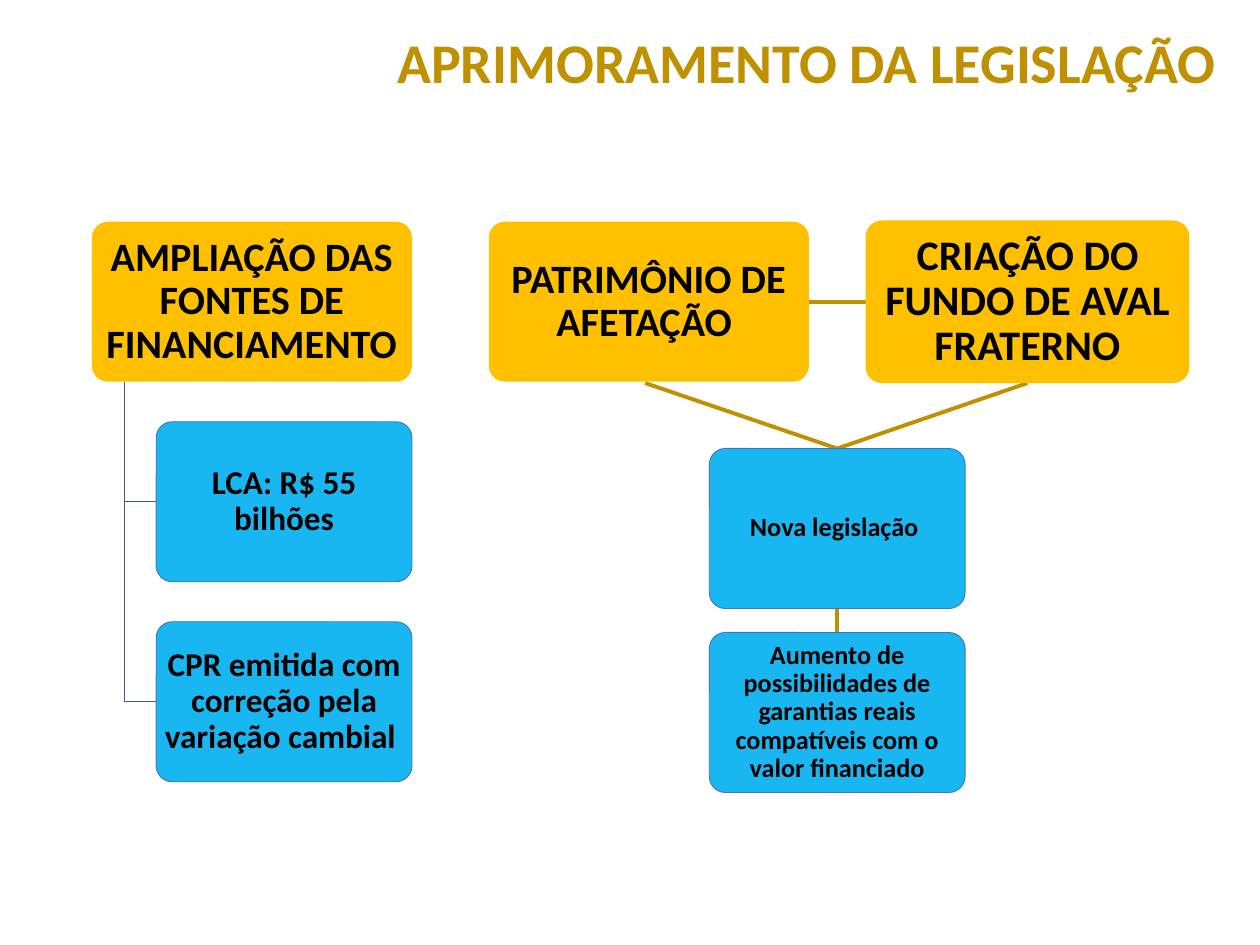
from dataclasses import dataclass

from lxml.etree import SubElement
from pptx import Presentation
from pptx.dml.color import RGBColor
from pptx.enum.shapes import MSO_CONNECTOR, MSO_SHAPE
from pptx.enum.text import MSO_ANCHOR, PP_ALIGN
from pptx.oxml.ns import qn
from pptx.util import Inches, Pt


@dataclass(frozen=True)
class Theme:
    font: str = "Calibri"
    gold: RGBColor = RGBColor(0xBF, 0x90, 0x00)
    amber: RGBColor = RGBColor(0xFF, 0xC0, 0x00)
    blue: RGBColor = RGBColor(0x00, 0xB0, 0xF0)
    outline: RGBColor = RGBColor(0x44, 0x72, 0xC4)
    branch: RGBColor = RGBColor(0x36, 0x5B, 0x9D)
    black: RGBColor = RGBColor(0, 0, 0)
    blue_opacity: int = 90
    title_size: float = 32
    topic_size: float = 23
    fund_size: float = 24
    detail_size: float = 19
    law_size: float = 15
    thin: float = 0.5
    thick: float = 2.25


@dataclass(frozen=True)
class Box:
    text: str
    left: float
    top: float
    width: float
    height: float
    size: float
    is_topic: bool = False

    @property
    def center(self) -> float:
        return self.left + self.width / 2

    @property
    def middle(self) -> float:
        return self.top + self.height / 2

    @property
    def bottom(self) -> float:
        return self.top + self.height


T = Theme()
TOPIC_W, DETAIL_W, BOX_H = 2.54, 2.03, 1.27
TOPIC_TOP, SOURCES_LEFT, DETAIL_LEFT, LAW_LEFT = 1.76, 0.73, 1.24, 5.63
ROW_STEP = BOX_H * 1.25
TRUNK_X = 0.99
ESTATE_LINK_X = 5.12

SOURCES = Box("AMPLIAÇÃO DAS FONTES DE FINANCIAMENTO",
              SOURCES_LEFT, TOPIC_TOP, TOPIC_W, BOX_H, T.topic_size, True)
DETAILS = [
    Box(text, DETAIL_LEFT, TOPIC_TOP + row * ROW_STEP, DETAIL_W, BOX_H, T.detail_size)
    for row, text in enumerate(
        ["LCA: R$ 55 bilhões", "CPR emitida com correção pela variação cambial "], 1)
]
ESTATE = Box("PATRIMÔNIO DE AFETAÇÃO ", 3.88, TOPIC_TOP, TOPIC_W, BOX_H, T.topic_size, True)
FUND = Box("CRIAÇÃO DO FUNDO DE AVAL FRATERNO", 6.87, 1.75, 2.57, 1.29, T.fund_size, True)
LAW = Box("Nova legislação ", LAW_LEFT, 3.56, DETAIL_W, BOX_H, T.law_size)
OUTCOME = Box("Aumento de possibilidades de garantias reais compatíveis com o valor financiado",
              LAW_LEFT, 5.02, DETAIL_W, BOX_H, T.law_size)


def write_text(sp, text: str, size: float, color: RGBColor, align: PP_ALIGN,
               margins: tuple[float, float]) -> None:
    tf = sp.text_frame
    mx, my = (Inches(m) for m in margins)
    frame_format = dict(word_wrap=True, vertical_anchor=MSO_ANCHOR.MIDDLE, margin_left=mx,
                        margin_right=mx, margin_top=my, margin_bottom=my)
    for name, value in frame_format.items():
        setattr(tf, name, value)
    p = tf.paragraphs[0]
    p.alignment, p.line_spacing = align, 0.9
    r = p.add_run()
    r.text = text
    for name, value in dict(name=T.font, size=Pt(size), bold=True).items():
        setattr(r.font, name, value)
    r.font.color.rgb = color


def add_box(s, box: Box) -> None:
    sp = s.shapes.add_shape(MSO_SHAPE.ROUNDED_RECTANGLE, Inches(box.left), Inches(box.top),
                            Inches(box.width), Inches(box.height))
    sp.adjustments[0] = 0.1
    sp.shadow.inherit = False
    sp.fill.solid()
    if box.is_topic:
        sp.fill.fore_color.rgb = T.amber
        sp.line.fill.background()
    else:
        sp.fill.fore_color.rgb = T.blue
        color = sp.fill._xPr.find(qn("a:solidFill"))[0]
        SubElement(color, qn("a:alpha")).set("val", str(T.blue_opacity * 1000))
        sp.line.color.rgb = T.outline
        sp.line.width = Pt(T.thin)
    margins = (0.05, 0.03) if box.is_topic else (0.03, 0.02)
    write_text(sp, box.text, box.size, T.black, PP_ALIGN.CENTER, margins)


def add_branch(s, parent: Box, child: Box) -> None:
    """Elbow from the parent's bottom edge to the child's left side."""
    fb = s.shapes.build_freeform(Inches(TRUNK_X), Inches(parent.bottom))
    fb.add_line_segments([(Inches(TRUNK_X), Inches(child.middle)),
                          (Inches(child.left), Inches(child.middle))], close=False)
    sp = fb.convert_to_shape()
    sp.shadow.inherit = False
    sp.fill.background()
    sp.line.color.rgb = T.branch
    sp.line.width = Pt(T.thin)


def add_link(s, x1: float, y1: float, x2: float, y2: float) -> None:
    cx = s.shapes.add_connector(MSO_CONNECTOR.STRAIGHT, Inches(x1), Inches(y1),
                                Inches(x2), Inches(y2))
    cx.line.color.rgb = T.gold
    cx.line.width = Pt(T.thick)
    SubElement(cx._element.spPr, qn("a:effectLst"))


def main() -> None:
    prs = Presentation()
    prs.slide_width, prs.slide_height = Inches(10), Inches(7.5)
    s = prs.slides.add_slide(prs.slide_layouts[6])

    title = s.shapes.add_textbox(Inches(2.27), Inches(0.19), Inches(7.48), Inches(0.66))
    write_text(title, "APRIMORAMENTO DA LEGISLAÇÃO", T.title_size, T.gold,
               PP_ALIGN.RIGHT, (0.1, 0.05))

    for detail in DETAILS:
        add_branch(s, SOURCES, detail)
    add_link(s, FUND.left, FUND.middle, ESTATE.left + ESTATE.width, FUND.middle)
    add_link(s, LAW.center, LAW.bottom, OUTCOME.center, OUTCOME.top)
    for x in (FUND.center, ESTATE_LINK_X):
        add_link(s, x, FUND.bottom, LAW.center, LAW.top)
    for box in (SOURCES, *DETAILS, ESTATE, FUND, LAW, OUTCOME):
        add_box(s, box)

    prs.save("out.pptx")


if __name__ == "__main__":
    main()
